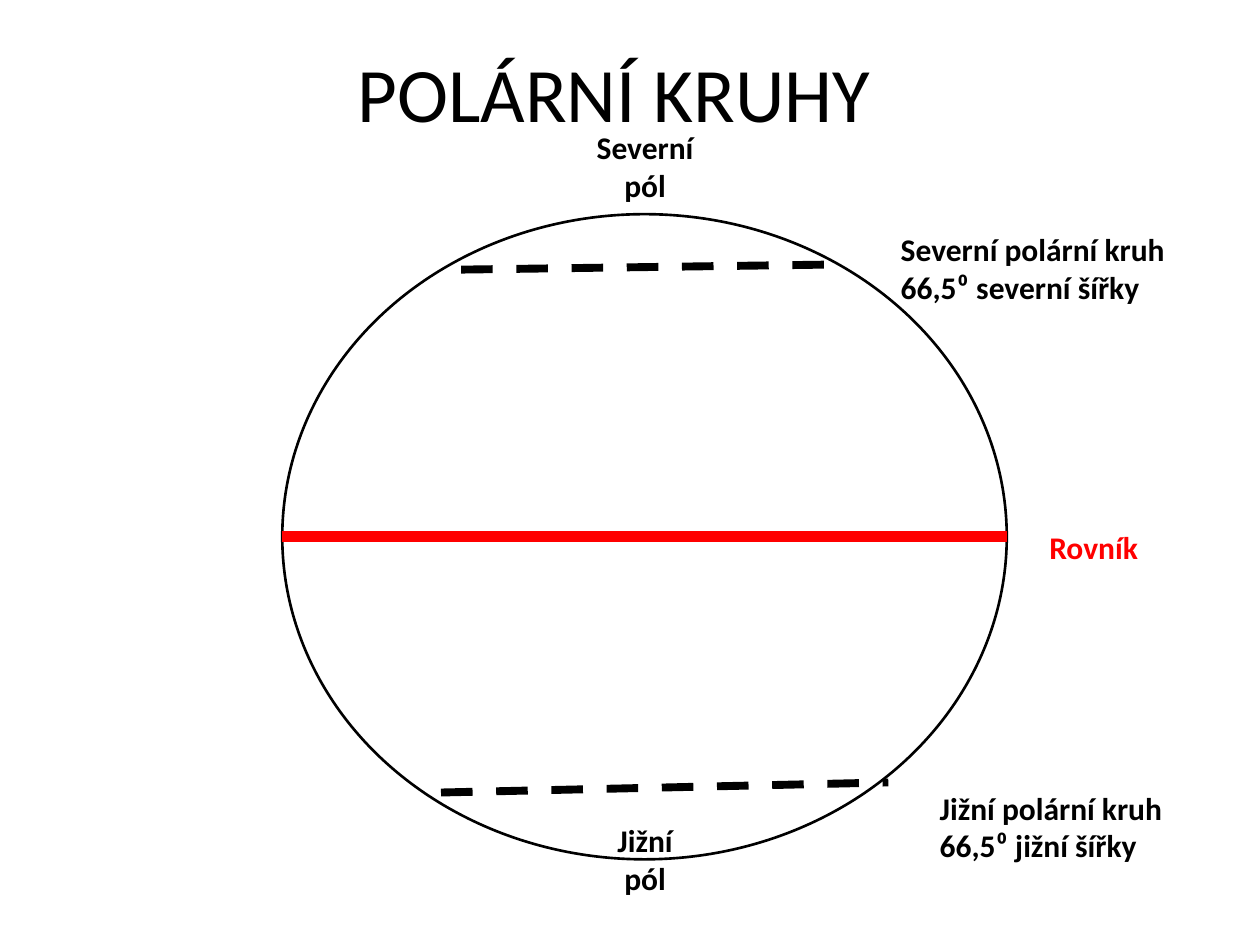
"""Build a slide that shows the polar circles and the equator on a globe."""
from lxml import etree
from pptx import Presentation
from pptx.dml.color import RGBColor
from pptx.enum.dml import MSO_LINE
from pptx.enum.shapes import MSO_CONNECTOR, MSO_SHAPE
from pptx.enum.text import MSO_ANCHOR, PP_ALIGN
from pptx.oxml.ns import qn
from pptx.util import Pt

BLACK = RGBColor(0, 0, 0)
RED = RGBColor(255, 0, 0)
LEFT, CENTER = PP_ALIGN.LEFT, PP_ALIGN.CENTER
TOP, MIDDLE = MSO_ANCHOR.TOP, MSO_ANCHOR.MIDDLE
DASH, SOLID = MSO_LINE.DASH, MSO_LINE.SOLID
OVAL, STRAIGHT = MSO_SHAPE.OVAL, MSO_CONNECTOR.STRAIGHT
SCALE = 9144

SIZE = (1000, 750)
GLOBE = (224, 170, 575, 512)
TITLE = {"size": Pt(44), "bold": False}
LABEL = {"size": Pt(18), "bold": True}

TEXTS = [
    (["POLÁRNÍ KRUHY"], (50, 30, 875, 85), CENTER, MIDDLE, BLACK, TITLE),
    (["Severní pól"], (456, 97, 112, 71), CENTER, TOP, BLACK, LABEL),
    (["Jižní pól"], (462, 647, 100, 71), CENTER, TOP, BLACK, LABEL),
    (["Rovník"], (823, 414, 94, 40), LEFT, TOP, RED, LABEL),
    (["Severní polární kruh", "66,5⁰ severní šířky"],
     (705, 178, 231, 71), LEFT, TOP, BLACK, LABEL),
    (["Jižní polární kruh", "66,5⁰ jižní šířky"],
     (736, 621, 200, 71), LEFT, TOP, BLACK, LABEL),
]

x, y, w, h = GLOBE
LINES = [
    ((x, y + h // 2, x + w, y + h // 2), RED, 6, SOLID),
    ((366, 214, 657, 210), BLACK, 4.5, DASH),
    ((350, 629, 705, 621), BLACK, 4.5, DASH),
]


def emu(nums):
    return [num * SCALE for num in nums]


def style(item, form):
    for key, val in form.items():
        setattr(item, key, val)


def add_globe(slide):
    globe = slide.shapes.add_shape(OVAL, *emu(GLOBE))
    globe.shadow.inherit = False
    globe.fill.background()
    globe.line.color.rgb = BLACK
    globe.line.width = Pt(1.5)


def add_line(slide, ends, color, width, dash):
    link = slide.shapes.add_connector(STRAIGHT, *emu(ends))
    link.line.color.rgb = color
    style(link.line, {"width": Pt(width), "dash_style": dash})
    etree.SubElement(link._element.spPr, qn("a:effectLst"))


def add_text(slide, rows, area, align, anchor, color, form):
    frame = slide.shapes.add_textbox(*emu(area)).text_frame
    style(frame, {"word_wrap": True, "vertical_anchor": anchor})
    frame.text = "\n".join(rows)
    for para in frame.paragraphs:
        para.alignment = align
        for run in para.runs:
            style(run.font, {"name": "Calibri", **form})
            run.font.color.rgb = color


def main():
    deck = Presentation()
    deck.slide_width, deck.slide_height = emu(SIZE)
    slide = deck.slides.add_slide(deck.slide_layouts[6])
    add_globe(slide)
    for line in LINES:
        add_line(slide, *line)
    for text in TEXTS:
        add_text(slide, *text)
    deck.save("out.pptx")


if __name__ == "__main__":
    main()
